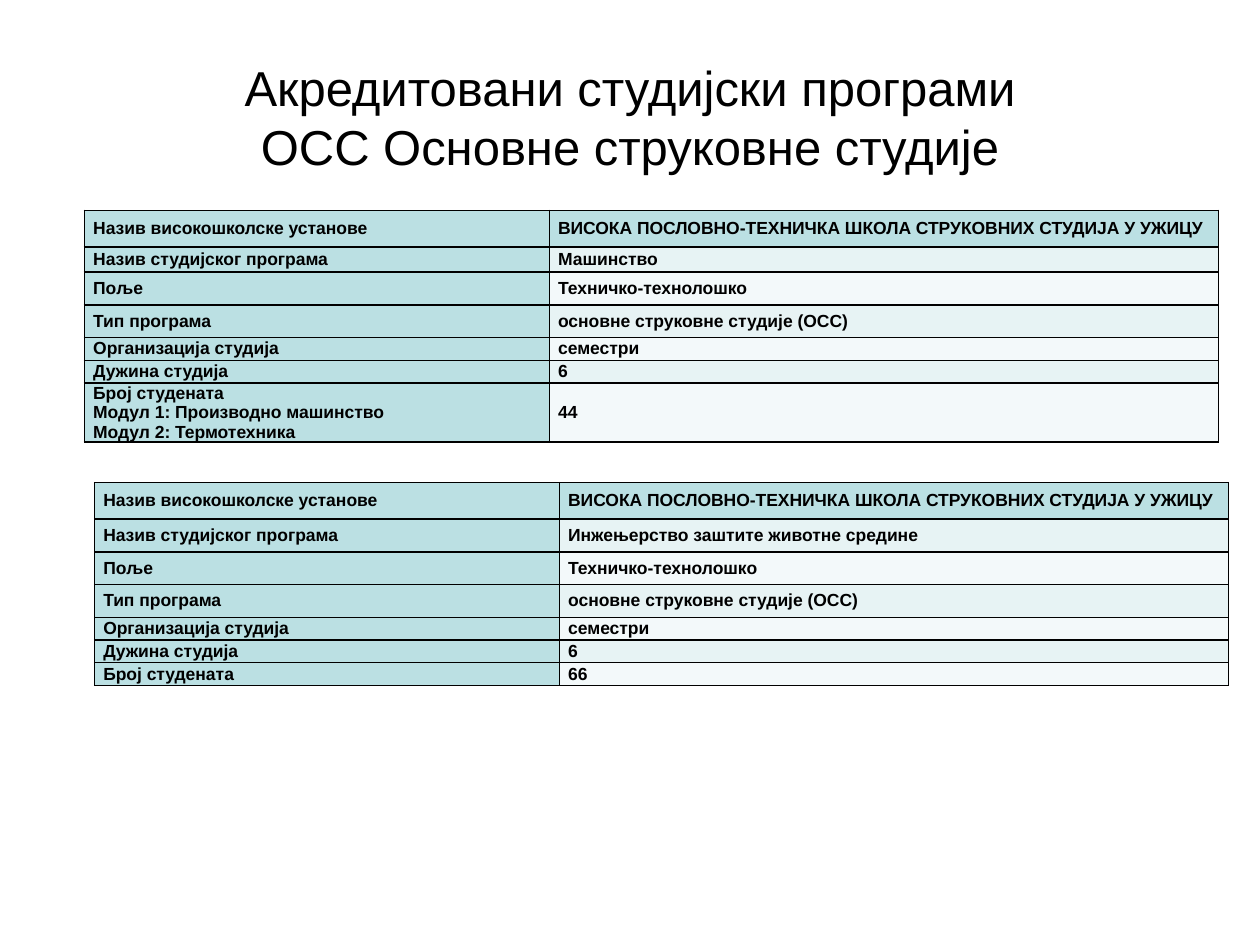
from pptx import Presentation
from pptx.dml.color import RGBColor
from pptx.enum.text import MSO_ANCHOR, PP_ALIGN
from pptx.oxml import parse_xml
from pptx.oxml.ns import nsdecls
from pptx.util import Inches, Pt

HEX = {"ink": "000000", "head": "BBE0E3", "odd": "E7F3F4", "even": "F3F9FA"}
COLS = [3.69, 5.31]
SCHOOL = "ВИСОКА ПОСЛОВНО-ТЕХНИЧКА ШКОЛА СТРУКОВНИХ СТУДИЈА У УЖИЦУ"


class Deck:
    font = "Arial"

    def __init__(self, wide, high):
        self.prs = Presentation()
        self.prs.slide_width = Inches(wide)
        self.prs.slide_height = Inches(high)
        self.slide = self.prs.slides.add_slide(self.prs.slide_layouts[5])

    def run(self, para, text, size, bold=False):
        run = para.add_run()
        run.text = text
        run.font.name = self.font
        run.font.size = Pt(size)
        run.font.bold = bold
        run.font.color.rgb = RGBColor.from_string(HEX["ink"])

    def title(self, lines, left, top, wide, high):
        box = self.slide.shapes.title
        box.left, box.top = Inches(left), Inches(top)
        box.width, box.height = Inches(wide), Inches(high)
        frame = box.text_frame
        frame.word_wrap = True
        frame.vertical_anchor = MSO_ANCHOR.MIDDLE
        para = frame.paragraphs[0]
        para.alignment = PP_ALIGN.CENTER
        for i, line in enumerate(lines):
            if i:
                para.add_line_break()
            self.run(para, line, 28)

    def border(self, cell):
        props = cell._tc.get_or_add_tcPr()
        for i, side in enumerate(("lnL", "lnR", "lnT", "lnB")):
            line = parse_xml(
                f'<a:{side} {nsdecls("a")} w="{Pt(1)}"><a:solidFill>'
                f'<a:srgbClr val="{HEX["ink"]}"/></a:solidFill></a:{side}>')
            props.insert(i, line)

    def cell(self, cell, text, tone):
        cell.fill.solid()
        cell.fill.fore_color.rgb = RGBColor.from_string(HEX[tone])
        cell.vertical_anchor = MSO_ANCHOR.MIDDLE
        cell.margin_left = cell.margin_right = Inches(0.07)
        cell.margin_top = cell.margin_bottom = 0
        frame = cell.text_frame
        for i, line in enumerate(text.split("\n")):
            para = frame.add_paragraph() if i else frame.paragraphs[0]
            self.run(para, line, 10, bold=True)
        self.border(cell)

    def table(self, left, top, rows):
        high = sum(row[0] for row in rows)
        grid = self.slide.shapes.add_table(
            len(rows), len(COLS), Inches(left), Inches(top),
            Inches(sum(COLS)), Inches(high)).table
        for col, wide in zip(grid.columns, COLS):
            col.width = Inches(wide)
        for r, (tall, label, value) in enumerate(rows):
            grid.rows[r].height = Inches(tall)
            tone = "head" if r == 0 else "odd" if r % 2 else "even"
            self.cell(grid.cell(r, 0), label, "head")
            self.cell(grid.cell(r, 1), value, tone)


def study(name, tall, last):
    """Rows of one study programme: height, label, value."""
    return [
        (0.29, "Назив високошколске установе", SCHOOL),
        (tall, "Назив студијског програма", name),
        (0.26, "Поље", "Техничко-технолошко"),
        (0.26, "Тип програма", "основне струковне студије (ОСС)"),
        (0.18, "Организација студија", "семестри"),
        (0.18, "Дужина студија", "6"),
        last,
    ]


def main():
    deck = Deck(10, 7.5)

    # Title
    deck.title(["Акредитовани студијски програми",
                "ОСС Основне струковне студије"], 0.5, 0.3, 9, 1.25)

    # Mechanical engineering
    count = "Број студената"
    parts = "\nМодул 1: Производно машинство\nМодул 2: Термотехника"
    deck.table(0.67, 1.67,
               study("Машинство", 0.2, (0.47, count + parts, "44")))

    # Environmental engineering
    deck.table(0.75, 3.83,
               study("Инжењерство заштите животне средине", 0.26,
                     (0.18, count, "66")))

    deck.prs.save("out.pptx")


if __name__ == "__main__":
    main()
